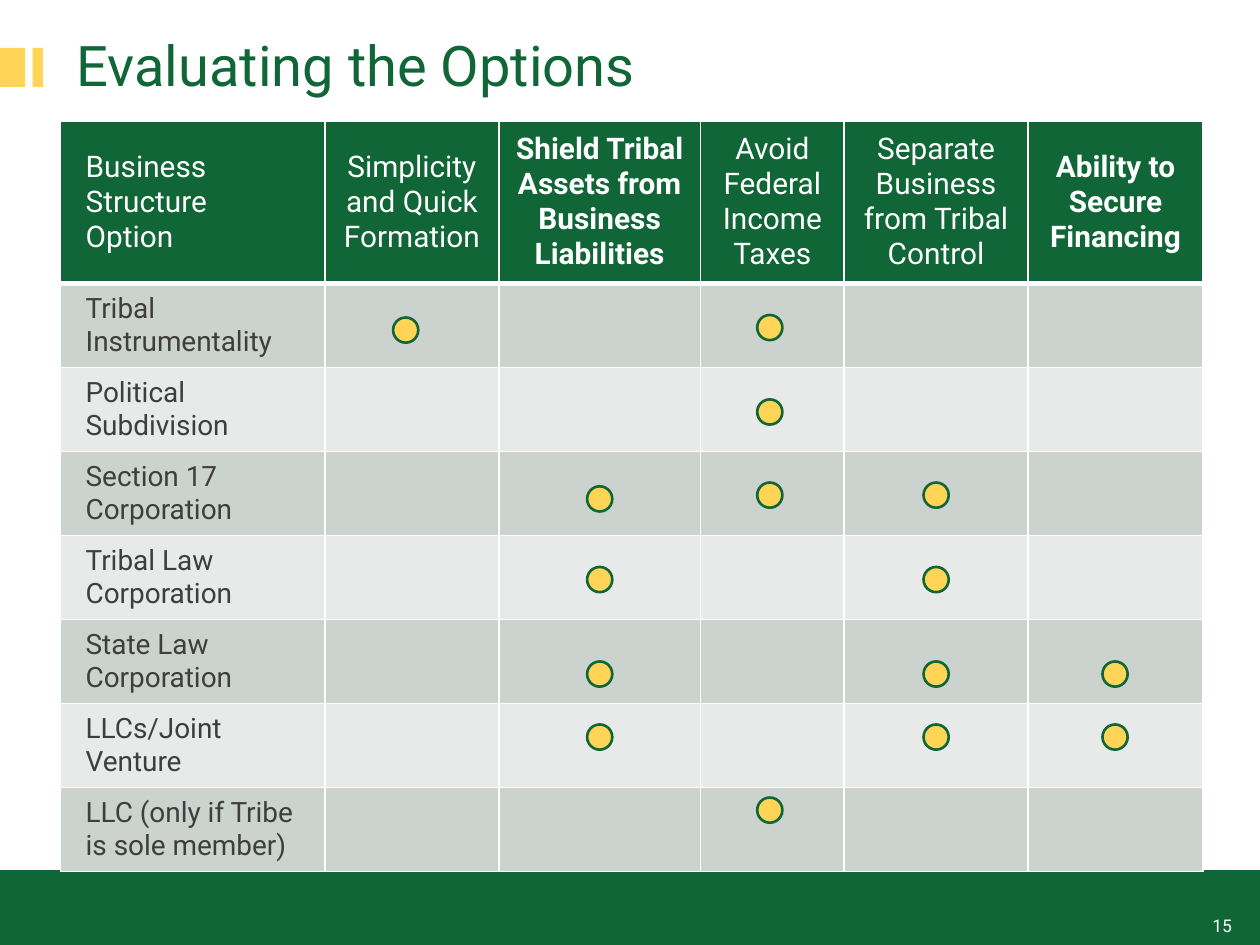
import pptx
import pptx.dml.color
import pptx.enum.shapes
import pptx.enum.text
import pptx.oxml
import pptx.oxml.ns
import pptx.util

Pt = pptx.util.Pt
RGBColor = pptx.dml.color.RGBColor
Shape = pptx.enum.shapes.MSO_SHAPE
Anchor = pptx.enum.text.MSO_ANCHOR
Align = pptx.enum.text.PP_ALIGN

GREEN = RGBColor(0x10, 0x66, 0x36)
YELLOW = RGBColor(0xFF, 0xD4, 0x57)
WHITE = RGBColor(0xFF, 0xFF, 0xFF)
DARK_GRAY = RGBColor(0x3E, 0x3E, 0x3E)
BAND_FILLS = (RGBColor(0xCC, 0xD3, 0xCE), RGBColor(0xE7, 0xEA, 0xE8))
FONT = "Roboto"

COLUMN_WIDTHS = (151.2, 99.36, 115.2, 82.08, 105.12, 100.08)
HEADER_HEIGHT = 92.88
ROW_HEIGHT = 47.2
DOT_SIZE = 14.4

# Header text and whether it is bold; each inner list is a paragraph of lines.
HEADERS = (
    ([["Business Structure", "Option"]], False),
    ([["Simplicity and Quick Formation"]], False),
    ([["Shield Tribal Assets from Business Liabilities"]], True),
    ([["Avoid Federal Income Taxes"]], False),
    ([["Separate Business from Tribal Control"]], False),
    ([["Ability to Secure Financing"]], True),
)

# Option text, dot top within the table, and {column: downward nudge}.
OPTIONS = (
    ([["Tribal"], ["Instrumentality"]], 110.88, {1: 1.44, 3: 0}),
    ([["Political Subdivision"]], 159.12, {3: 0}),
    ([["Section 17 Corporation"]], 206.64, {2: 2.16, 3: 0, 4: 0}),
    ([["Tribal Law Corporation"]], 254.88, {2: 0, 4: 0}),
    ([["State Law Corporation"]], 308.88, {2: 0, 4: 0, 5: 0}),
    ([["LLCs/Joint Venture"]], 344.88, {2: 0, 4: 0, 5: 0}),
    ([["LLC (only if Tribe", "is sole member)"]], 386.64, {3: 0}),
)
DOT_LEFTS = {1: 190.08, 2: 300.96, 3: 398.16, 4: 493.2, 5: 595.44}


def add_text(paragraph, lines, size, color, bold=False):
    for number, line in enumerate(lines):
        if number:
            paragraph.add_line_break()
        run = paragraph.add_run()
        run.text = line
        run.font.name = FONT
        run.font.size = Pt(size)
        run.font.bold = bold
        run.font.color.rgb = color


def add_filled_shape(slide, kind, box, color, outline=None):
    shape = slide.shapes.add_shape(kind, *map(Pt, box))
    shape.shadow.inherit = False
    shape.fill.solid()
    shape.fill.fore_color.rgb = color
    if outline is None:
        shape.line.fill.background()
    else:
        shape.line.color.rgb = outline
        shape.line.width = Pt(1.5)


def set_borders(cell, bottom_width=1):
    """Draw white borders; call before the cell's fill is set."""
    properties = cell._tc.get_or_add_tcPr()
    for side in ("L", "R", "T", "B"):
        width = Pt(bottom_width if side == "B" else 1)
        properties.append(pptx.oxml.parse_xml(
            f'<a:ln{side} {pptx.oxml.ns.nsdecls("a")} w="{width}">'
            f'<a:solidFill><a:srgbClr val="{WHITE}"/></a:solidFill></a:ln{side}>'))


def fill_cell(cell, color, bottom_width=1):
    set_borders(cell, bottom_width)
    cell.fill.solid()
    cell.fill.fore_color.rgb = color
    cell.vertical_anchor = Anchor.MIDDLE


def write_cell(cell, paragraphs, size, color, bold=False, alignment=Align.LEFT):
    for number, lines in enumerate(paragraphs):
        frame = cell.text_frame
        paragraph = frame.add_paragraph() if number else frame.paragraphs[0]
        paragraph.alignment = alignment
        add_text(paragraph, lines, size, color, bold)


def add_title(slide, left, top, width, height):
    title = slide.shapes.title
    title.left, title.top = Pt(left), Pt(top)
    title.width, title.height = Pt(width), Pt(height)
    frame = title.text_frame
    frame.word_wrap = True
    frame.auto_size = pptx.enum.text.MSO_AUTO_SIZE.NONE
    frame.vertical_anchor = Anchor.TOP
    frame.margin_left = Pt(15)
    frame.paragraphs[0].alignment = Align.LEFT
    add_text(frame.paragraphs[0], ["Evaluating the Options"], 32, GREEN)


def add_title_marks(slide, left, top, height):
    for offset, width in ((0, 14.4), (18.72, 5.76)):
        add_filled_shape(slide, Shape.RECTANGLE,
                         (left + offset, top, width, height), YELLOW)


def add_footer(slide, left, top, width, height):
    add_filled_shape(slide, Shape.RECTANGLE, (left, top, width, height), GREEN)
    rule = slide.shapes.add_connector(
        pptx.enum.shapes.MSO_CONNECTOR.STRAIGHT,
        Pt(left), Pt(top), Pt(left + width), Pt(top))
    rule.line.color.rgb = GREEN
    rule.line.width = Pt(0.5)
    properties = rule._element.spPr
    properties.append(properties.makeelement(pptx.oxml.ns.qn("a:effectLst"), {}))
    number = slide.shapes.add_textbox(
        Pt(left + width - 43.2), Pt(top + 21.6), Pt(43.2), Pt(20.88))
    number.text_frame.word_wrap = True
    paragraph = number.text_frame.paragraphs[0]
    paragraph.alignment = Align.CENTER
    add_text(paragraph, ["15"], 10, WHITE)


def add_options_table(slide, left, top):
    height = HEADER_HEIGHT + ROW_HEIGHT * len(OPTIONS)
    table = slide.shapes.add_table(
        len(OPTIONS) + 1, len(HEADERS),
        Pt(left), Pt(top), Pt(sum(COLUMN_WIDTHS)), Pt(height)).table
    for column, width in zip(table.columns, COLUMN_WIDTHS):
        column.width = Pt(width)
    for row in table.rows:
        row.height = Pt(ROW_HEIGHT)
    table.rows[0].height = Pt(HEADER_HEIGHT)

    for column, (paragraphs, bold) in enumerate(HEADERS):
        cell = table.cell(0, column)
        fill_cell(cell, GREEN, bottom_width=3)
        write_cell(cell, paragraphs, 17, WHITE, bold,
                   Align.CENTER if column else Align.LEFT)
    table.cell(0, 0).margin_left = Pt(14.4)

    for row, (paragraphs, _, _) in enumerate(OPTIONS, start=1):
        for column in range(len(HEADERS)):
            fill_cell(table.cell(row, column), BAND_FILLS[(row - 1) % 2])
        cell = table.cell(row, 0)
        cell.margin_left = Pt(14.4)
        cell.margin_top = cell.margin_bottom = Pt(4.8)
        write_cell(cell, paragraphs, 16, DARK_GRAY)


def add_dots(slide, left, top):
    for _, dot_top, nudges in OPTIONS:
        for column, nudge in nudges.items():
            box = (left + DOT_LEFTS[column], top + dot_top + nudge,
                   DOT_SIZE, DOT_SIZE)
            add_filled_shape(slide, Shape.OVAL, box, YELLOW, GREEN)


def main():
    presentation = pptx.Presentation()
    presentation.slide_width, presentation.slide_height = Pt(720), Pt(540)
    slide = presentation.slides.add_slide(presentation.slide_layouts[5])
    add_footer(slide, 0, 497.52, 720, 43.2)
    add_title_marks(slide, 0, 27.36, 22.32)
    add_title(slide, 28.8, 13.68, 648, 77.76)
    add_options_table(slide, 34.56, 69.12)
    add_dots(slide, 34.56, 69.12)
    presentation.save("out.pptx")


if __name__ == "__main__":
    main()
